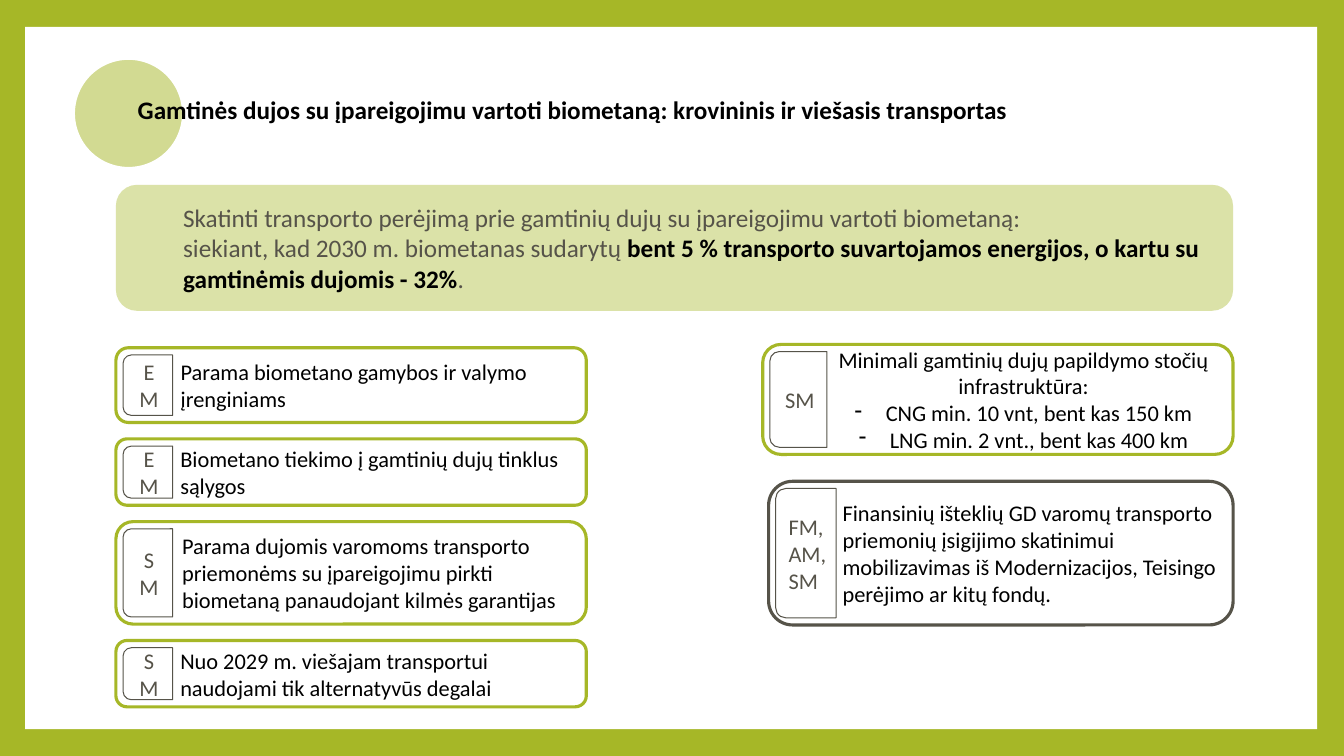
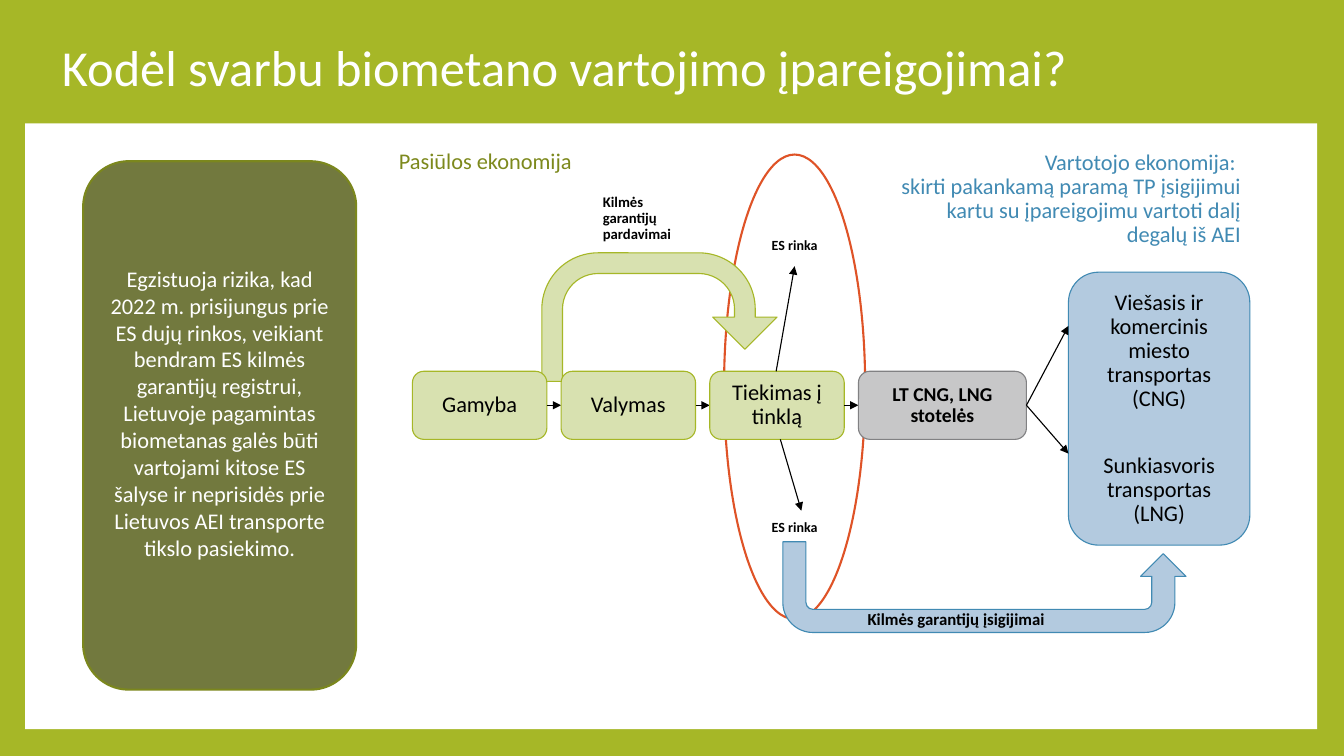
from lxml.etree import SubElement
from pptx import Presentation
from pptx.dml.color import RGBColor
from pptx.enum.shapes import MSO_CONNECTOR, MSO_SHAPE
from pptx.enum.text import MSO_ANCHOR, PP_ALIGN
from pptx.oxml.ns import qn
from pptx.util import Emu, Pt

COLS, ROWS, CELL = 160, 90, 76200
FONT = "Calibri"
LIME, PALE, GRAY, BLUE, SKY = "A6B727", "D8E1B0", "565349", "418AB3", "B3CADF"
BLACK, WHITE = "000000", "FFFFFF"
LEFT, MID, RIGHT = PP_ALIGN.LEFT, PP_ALIGN.CENTER, PP_ALIGN.RIGHT
ROUND = MSO_SHAPE.ROUNDED_RECTANGLE


def tint(code):
    """Turn a hex string into a colour."""
    return RGBColor.from_string(code)


def grid(*cells):
    """Turn grid cells into lengths."""
    return [Emu(round(cell * CELL)) for cell in cells]


class Deck:
    """Hold the style and the current slide; places are in grid cells."""

    def __init__(self):
        """Open a blank deck with the lime ground."""
        self.show = Presentation()
        self.show.slide_width, self.show.slide_height = grid(COLS, ROWS)
        ground = self.show.slide_master.background.fill
        ground.solid()
        ground.fore_color.rgb = tint(LIME)

    def page(self):
        """Start a slide with its white panel."""
        self.slide = self.show.slides.add_slide(self.show.slide_layouts[6])
        self.box(MSO_SHAPE.RECTANGLE, 3, 3.2, 153.8, 83.6, WHITE)

    def box(self, kind, x, y, w, h, fill=None, line=None, weight=0.79, alpha=None, adjust=()):
        """Add a preset shape."""
        shape = self.slide.shapes.add_shape(kind, *grid(x, y, w, h))
        shape.shadow.inherit = False
        if fill:
            shape.fill.solid()
            shape.fill.fore_color.rgb = tint(fill)
        else:
            shape.fill.background()
        if alpha:
            solid = shape.element.spPr.find(qn("a:solidFill"))
            SubElement(solid[0], qn("a:alpha"), val=str(alpha * 1000))
        if line:
            shape.line.color.rgb = tint(line)
            shape.line.width = Pt(weight)
        else:
            shape.line.fill.background()
        for i, value in enumerate(adjust):
            shape.adjustments[i] = value
        return shape

    def text(self, shape, paras, size=16, color=BLACK, bold=False, align=MID,
             indent=0, tight=False, gap=0, dash=()):
        """Fill a shape with paragraphs, each a list of runs."""
        frame = shape.text_frame
        frame.word_wrap = True
        for i, runs in enumerate(paras):
            para = frame.add_paragraph() if i else frame.paragraphs[0]
            para.alignment = align
            if tight:
                para.line_spacing, para.space_after = 0.9, Pt(6)
            if gap and i:
                para.space_before = Pt(gap)
            props = para._p.get_or_add_pPr()
            left, hang = grid(indent + 3.7, -3.7) if i in dash else grid(indent, 0)
            props.set("marL", str(left))
            props.set("indent", str(hang))
            if i in dash:
                SubElement(props, qn("a:buChar"), char="-")
            for words, *look in runs:
                if words == "\n":
                    para.add_line_break()
                    continue
                run = para.add_run()
                run.text = words
                run.font.name, run.font.size = FONT, Pt(size)
                run.font.bold = bool(look) or bold
                run.font.color.rgb = tint(look[0] if look else color)

    def label(self, x, y, w, h, paras, inset=None, anchor=MSO_ANCHOR.TOP, **style):
        """Add free text."""
        shape = self.slide.shapes.add_textbox(*grid(x, y, w, h))
        frame = shape.text_frame
        frame.vertical_anchor = anchor
        if inset is not None:
            frame.margin_left = frame.margin_right = Emu(inset)
        self.text(shape, paras, tight=True, **style)

    def card(self, x, y, w, h, owner, wide, paras, line=LIME, side=MID, **style):
        """Add a framed measure with the tag of its owner."""
        self.text(self.box(ROUND, x, y, w, h, WHITE, line, 2.25), paras, **style)
        pad = 0.85
        tall = h - 2 * pad
        turn = (tall - wide) / 2
        tag = self.box(MSO_SHAPE.ROUND_2_SAME_RECTANGLE, x + pad - turn, y + pad + turn,
                       tall, wide, line=GRAY, weight=0.75)
        tag.rotation = 270
        tag.text_frame._txBody.bodyPr.set("vert", "vert")
        self.text(tag, [[(owner,)]], color=GRAY, align=side)

    def arrow(self, x1, y1, x2, y2):
        """Add a thin arrow."""
        link = self.slide.shapes.add_connector(MSO_CONNECTOR.STRAIGHT, *grid(x1, y1, x2, y2))
        link.line.color.rgb = tint(BLACK)
        link.line.width = Pt(0.79)
        props = link.element.spPr
        SubElement(props.find(qn("a:ln")), qn("a:tailEnd"), type="triangle")
        SubElement(props, qn("a:effectLst"))


def plan(deck):
    """Draw the measures for gas transport."""
    deck.page()
    goal = deck.box(ROUND, 13.8, 22, 133, 15, LIME, alpha=40)
    deck.text(goal, [
        [("Skatinti transporto perėjimą prie gamtinių dujų su įpareigojimu vartoti biometaną:",)],
        [("siekiant, kad 2030 m. biometanas sudarytų ",),
         ("bent 5 % transporto suvartojamos energijos, o kartu su gamtinėmis dujomis - 32%", BLACK),
         (".",)],
    ], size=18, color=GRAY, align=LEFT, indent=6.1)
    deck.box(MSO_SHAPE.OVAL, 8.8, 7, 13, 13, LIME, WHITE, 1.5, 50)
    deck.label(16.4, 10.1, 121.3, 6.2, [[
        ("Gamtinės dujos su įpareigojimu vartoti biometaną: krovininis ir viešasis transportas",)]],
        inset=0, anchor=MSO_ANCHOR.MIDDLE, size=18, bold=True, align=LEFT)

    top = 41.4
    for tall, owner, words in (
        (8.9, "EM", "Parama biometano gamybos ir valymo įrenginiams"),
        (7.9, "EM", "Biometano tiekimo į gamtinių dujų tinklus sąlygos"),
        (12.2, "SM", "Parama dujomis varomoms transporto priemonėms su įpareigojimu pirkti "
                     "biometaną panaudojant kilmės garantijas"),
        (7.9, "SM", "Nuo 2029 m. viešajam transportui naudojami tik alternatyvūs degalai"),
    ):
        deck.card(13.8, top, 56, tall, owner, 5.9, [[(words,)]], align=LEFT, indent=6.1)
        top += tall + 1.95

    deck.card(90.8, 41, 56, 13.1, "SM", 6.8, [
        [("Minimali gamtinių dujų papildymo stočių infrastruktūra:",)],
        [("CNG min. 10 vnt, bent kas 150 km",)],
        [("LNG min. 2 vnt., bent kas 400 km",)],
    ], indent=6.1, dash=(1, 2))
    deck.card(91.5, 57.3, 55.3, 17.1, "FM, AM,SM", 7.2, [[
        ("Finansinių išteklių GD varomų transporto priemonių įsigijimo skatinimui "
         "mobilizavimas iš Modernizacijos, Teisingo perėjimo ar kitų fondų.",)]],
        line=GRAY, side=LEFT, align=LEFT, indent=6.8)


def chain(deck):
    """Draw the supply chain and the risk beside it."""
    deck.page()
    deck.box(MSO_SHAPE.RECTANGLE, 1.6, 1.3, 156.8, 13.4, LIME)
    deck.label(6.2, -0.5, 139.4, 17.8, [[("Kodėl svarbu biometano vartojimo įpareigojimai?",)]],
               anchor=MSO_ANCHOR.MIDDLE, size=36, color=WHITE, align=LEFT)
    market = deck.box(MSO_SHAPE.OVAL, 86.2, 18.4, 16.8, 55.3, WHITE, "DF5327", 1.5)
    deck.text(market, [[("ES rinka",)]] * 2, size=10, bold=True, tight=True, gap=185)
    deck.box(MSO_SHAPE.U_TURN_ARROW, 64.5, 30.1, 28, 15.3, PALE, LIME,
             adjust=(0.161, 0.25, 0.25, 0.438, 0.75))

    left, top, wide, tall, gap = 49.1, 44.2, 16, 8.1, 1.7
    axis = top + tall / 2
    for words in ("Gamyba", "Valymas", "Tiekimas į tinklą"):
        step = deck.box(ROUND, left, top, wide, tall, PALE, LIME)
        deck.text(step, [[(words,)]], tight=True)
        deck.arrow(left + wide, axis, left + wide + gap, axis)
        left += wide + gap
    stop = deck.box(ROUND, left, top, 20, tall, "C7C7C8", "818183")
    deck.text(stop, [[("LT CNG, LNG stotelės",)]], size=14, bold=True, tight=True)

    users = deck.box(ROUND, 127.2, 32.4, 21.6, 32.5, SKY, BLUE)
    deck.text(users, [[("Viešasis ir komercinis miesto transportas (CNG)",)],
                      [("Sunkiasvoris transportas (LNG)",)]], tight=True, gap=24)
    for end in (38.8, 54):
        deck.arrow(left + 20, axis, 127.2, end)
    deck.arrow(92.4, top, 94.6, 31.7)
    deck.arrow(92.9, top + tall, 95.4, 60.8)

    back = deck.box(MSO_SHAPE.U_TURN_ARROW, 93.2, 64.5, 48, 10.8, SKY, BLUE,
                    adjust=(0.255, 0.25, 0.25, 0.332, 0.869))
    back.element.spPr.xfrm.set("flipV", "1")

    deck.label(46.3, 17.3, 41.2, 4.7, [[("Pasiūlos ekonomija",)]], color="7D891D", align=LEFT)
    deck.label(105.6, 17.4, 43.3, 11.4, [[
        ("Vartotojo ekonomija: ",), ("\n",),
        ("skirti pakankamą paramą TP įsigijimui kartu su įpareigojimu vartoti dalį degalų iš AEI",)]],
        color=BLUE, align=RIGHT)
    deck.label(102.1, 72.2, 37.9, 3.8, [[("Kilmės garantijų įsigijimai",)]],
               size=12, bold=True, align=LEFT)
    deck.label(70.6, 22.6, 13.9, 9.4, [[("Kilmės garantijų pardavimai",)]],
               size=10.5, bold=True, align=LEFT)

    risk = deck.box(ROUND, 9.9, 19.2, 32.5, 62.9, "535C14", "7B871D", 1.5, 82)
    risk.text_frame.margin_bottom = grid(3.6)[0]
    deck.text(risk, [[
        ("Egzistuoja rizika, kad 2022 m. prisijungus prie ES dujų rinkos, veikiant bendram ES "
         "kilmės garantijų registrui, Lietuvoje pagamintas biometanas galės būti vartojami kitose "
         "ES šalyse ir neprisidės prie Lietuvos AEI transporte tikslo pasiekimo.",)]], color=WHITE)


def main():
    """Build and save the deck."""
    deck = Deck()
    plan(deck)
    chain(deck)
    deck.show.save("out.pptx")


if __name__ == "__main__":
    main()
